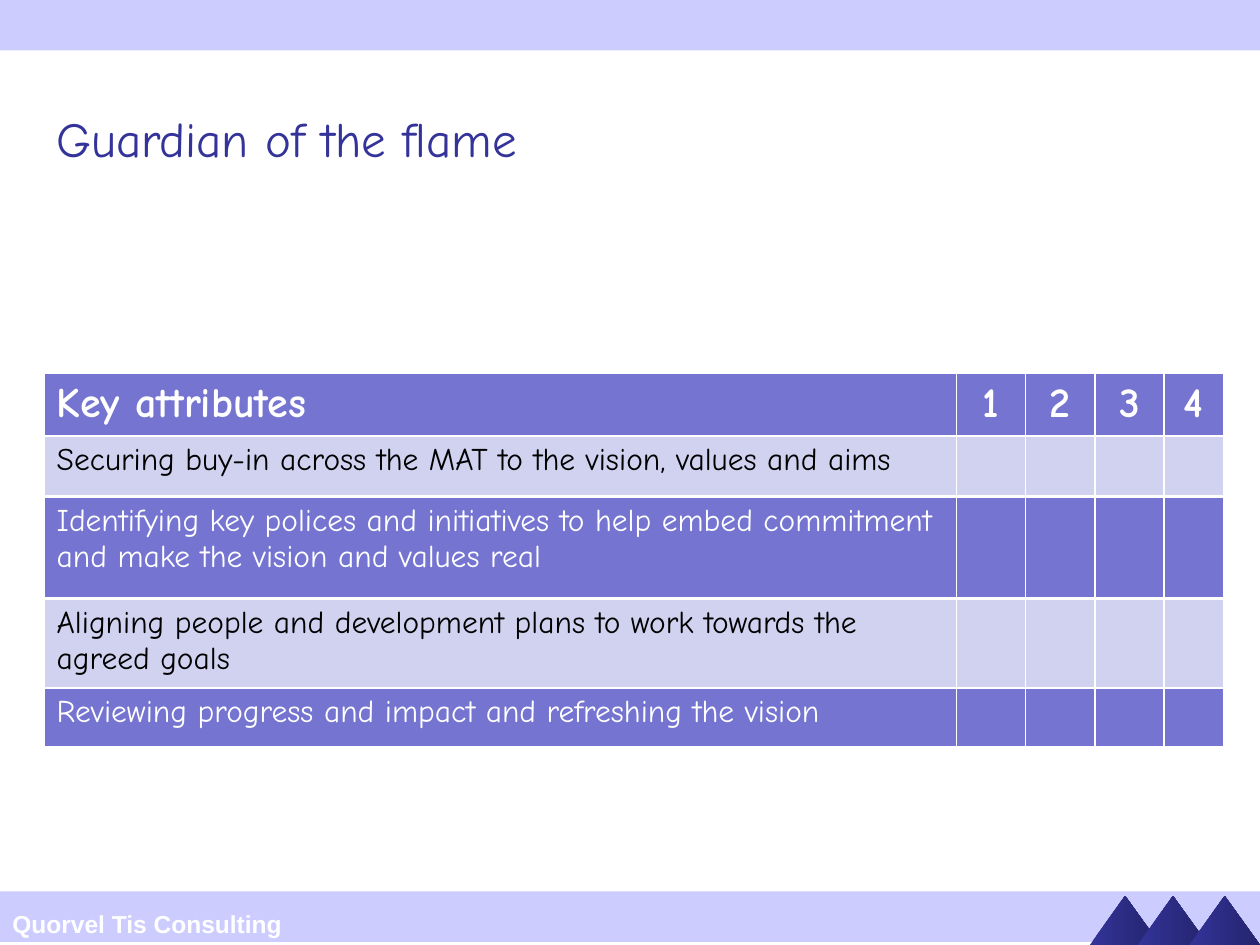
import pptx
import pptx.util
import pptx.dml.color
import pptx.enum.shapes
import pptx.enum.text
import pptx.oxml
import pptx.oxml.ns

COLS, ROWS = 100, 75
HUES = {"navy": "333399", "deep": "24246D", "pale": "CCCCFF", "mid": "7575D1",
        "tint": "D1D1F0", "white": "FFFFFF", "black": "000000"}
SHAPE = pptx.enum.shapes.MSO_SHAPE
ALIGN = pptx.enum.text.PP_ALIGN
ANCHOR = pptx.enum.text.MSO_ANCHOR


def hue(name):
    return pptx.dml.color.RGBColor.from_string(HUES[name])


class Deck:
    """Holds the style and the current slide; lengths are grid columns and rows."""
    font = "Comic Neue"

    def __init__(self):
        self.prs = pptx.Presentation()
        self.prs.slide_width = pptx.util.Inches(10)
        self.prs.slide_height = pptx.util.Inches(7.5)
        self.slide = self.prs.slides.add_slide(self.prs.slide_layouts[6])

    def x(self, cols):
        return round(self.prs.slide_width * cols / COLS)

    def y(self, rows):
        return round(self.prs.slide_height * rows / ROWS)

    def box(self, left, top, wide, high):
        return self.x(left), self.y(top), self.x(wide), self.y(high)

    def ink(self, frame, size, color, bold=False, font=None):
        for par in frame.paragraphs:
            for run in par.runs:
                run.font.name = font or self.font
                run.font.size = pptx.util.Pt(size)
                run.font.bold = bold
                run.font.color.rgb = hue(color)

    def shape(self, kind, *place):
        item = self.slide.shapes.add_shape(kind, *self.box(*place))
        item.shadow.inherit = False
        item.line.fill.background()
        return item

    def band(self, top):
        fill = self.shape(SHAPE.RECTANGLE, 0, top, COLS, 4).fill
        fill.solid()
        fill.fore_color.rgb = hue("pale")

    def peak(self, left):
        fill = self.shape(SHAPE.ISOSCELES_TRIANGLE, left, 71.1, 5.6, 3.9).fill
        fill.gradient()
        fill.gradient_angle = 0
        for stop, name in zip(fill.gradient_stops, ("navy", "deep")):
            stop.color.rgb = hue(name)

    def text(self, words, place, size, color, **style):
        frame = self.slide.shapes.add_textbox(*self.box(*place)).text_frame
        frame.word_wrap = True
        frame.vertical_anchor = ANCHOR.MIDDLE
        frame.text = words
        self.ink(frame, size, color, **style)

    def rule(self, cell):
        """Draw white borders on all four sides of a cell."""
        props = cell._tc.get_or_add_tcPr()
        for spot, (side, width) in enumerate(
                (("L", 1), ("R", 1), ("T", 1.5), ("B", 1.5))):
            props.insert(spot, pptx.oxml.parse_xml(
                f'<a:ln{side} {pptx.oxml.ns.nsdecls("a")} w="{pptx.util.Pt(width)}">'
                f'<a:solidFill><a:srgbClr val="{HUES["white"]}"/></a:solidFill>'
                f'</a:ln{side}>'))

    def table(self, left, top, wides, highs, data):
        place = self.box(left, top, sum(wides), sum(highs))
        grid = self.slide.shapes.add_table(len(highs), len(wides), *place).table
        for col, wide in zip(grid.columns, wides):
            col.width = self.x(wide)
        for r, (row, words) in enumerate(zip(grid.rows, data)):
            row.height = self.y(highs[r])
            head, light = r == 0, r % 2 == 1
            for c, cell in enumerate(row.cells):
                cell.fill.solid()
                cell.fill.fore_color.rgb = hue("tint" if light else "mid")
                self.rule(cell)
                if c < len(words):
                    cell.text_frame.text = words[c]
                    self.ink(cell.text_frame, 24 if head else 18,
                             "black" if light else "white", bold=head)
                    if c:
                        cell.text_frame.paragraphs[0].alignment = ALIGN.CENTER


def main():
    deck = Deck()
    deck.band(70.75)
    for left in (86.5, 90.3, 94.4):
        deck.peak(left)
    deck.text("Quorvel Tis Consulting", (0, 71.7, 28.4, 3.3), 14, "white",
              bold=True, font="Arial")
    deck.band(0)
    deck.text("Guardian of the flame", (3.5, 6, 96.5, 9.9), 28, "navy")
    deck.table(3.5, 29.6, [72.4, 5.5, 5.5, 5.5, 4.7], [4.8, 4.8, 8.1, 7.1, 4.7], [
        ["Key attributes", "1", "2", "3", "4"],
        ["Securing buy-in across the MAT to the vision, values and aims"],
        ["Identifying key polices and initiatives to help embed commitment "
         "and make the vision and values real"],
        ["Aligning people and development plans to work towards the agreed goals"],
        ["Reviewing progress and impact and refreshing the vision"],
    ])
    deck.prs.save("out.pptx")


if __name__ == "__main__":
    main()
